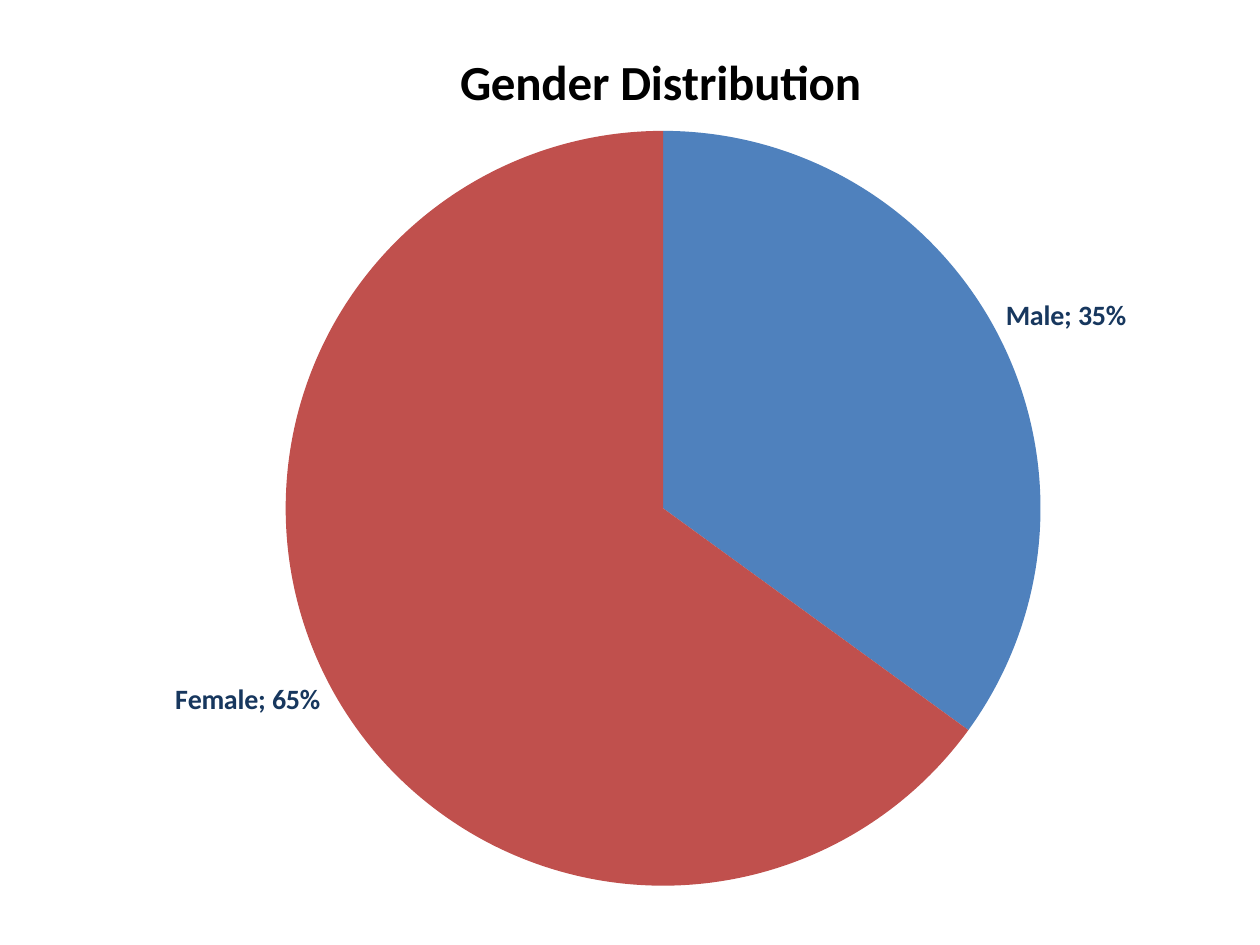
from pptx import Presentation
from pptx.chart.data import CategoryChartData
from pptx.dml.color import RGBColor
from pptx.enum.chart import XL_CHART_TYPE, XL_LABEL_POSITION
from pptx.oxml import parse_xml
from pptx.oxml.ns import nsdecls, qn
from pptx.util import Emu, Pt

PIE = XL_CHART_TYPE.PIE
OUTSIDE_END = XL_LABEL_POSITION.OUTSIDE_END

PX = 914400 // 126
SLIDE_WIDTH, SLIDE_HEIGHT = 1260, 945

BLACK = RGBColor(0x00, 0x00, 0x00)
NAVY = RGBColor(0x17, 0x37, 0x5E)
BLUE = RGBColor(0x4F, 0x81, 0xBD)
RED = RGBColor(0xC0, 0x50, 0x4D)


def set_layout(element, index, **fractions):
    """Place a chart part by fractions of the chart's size."""
    for old_layout in element.findall(qn("c:layout")):
        element.remove(old_layout)
    target = '<c:layoutTarget val="inner"/>' if "w" in fractions else ""
    modes = "".join(f'<c:{name}Mode val="edge"/>' for name in "xy")
    values = "".join(f'<c:{name} val="{value}"/>' for name, value in fractions.items())
    element.insert(index, parse_xml(
        f'<c:layout {nsdecls("c")}><c:manualLayout>{target}{modes}{values}'
        "</c:manualLayout></c:layout>"))


class SlideBuilder:
    """Holds the style and the current slide."""

    font_name = "Calibri"

    def __init__(self, presentation):
        self.slide = presentation.slides.add_slide(presentation.slide_layouts[6])

    def style_font(self, font, size, color, bold=False):
        font.name = self.font_name
        font.size = Pt(size)
        font.bold = bold
        font.color.rgb = color

    def add_pie(self, box, title, shares, colors):
        data = CategoryChartData(number_format="0%")
        data.categories = list(shares)
        data.add_series("Series 1", list(shares.values()))
        frame = self.slide.shapes.add_chart(PIE, *(Emu(side * PX) for side in box), data)
        chart = frame.chart
        chart.has_legend = False
        self.style_font(chart.font, 10, BLACK)
        self.add_title(chart, title)
        plot = chart.plots[0]
        plot.vary_by_categories = True
        for index, color in enumerate(colors):
            fill = plot.series[0].points[index].format.fill
            fill.solid()
            fill.fore_color.rgb = color
        self.add_labels(plot.series[0].data_labels)
        plot_area = chart.element.chart.plotArea
        set_layout(plot_area, 0, x=0.2, y=0.145, w=0.62, h=0.836)

    def add_title(self, chart, text):
        chart.has_title = True
        title = chart.chart_title
        title.include_in_layout = False
        run = title.text_frame.paragraphs[0].add_run()
        run.text = text
        self.style_font(run.font, 28, BLACK, bold=True)
        set_layout(title.element if hasattr(title, "element") else title._element,
                   1, x=0.336, y=0.044)

    def add_labels(self, labels):
        labels.show_category_name = True
        labels.show_value = True
        labels.show_percentage = False
        labels.number_format = "0%"
        labels.number_format_is_linked = False
        labels.position = OUTSIDE_END
        self.style_font(labels.font, 16, NAVY, bold=True)
        show_bubble_size = labels._element.find(qn("c:showBubbleSize"))
        show_bubble_size.addnext(
            parse_xml(f'<c:separator {nsdecls("c")}>; </c:separator>'))


def main():
    presentation = Presentation()
    presentation.slide_width = Emu(SLIDE_WIDTH * PX)
    presentation.slide_height = Emu(SLIDE_HEIGHT * PX)
    builder = SlideBuilder(presentation)
    builder.add_pie((42, 0, 1218, 903), "Gender Distribution",
                    {"Male": 0.35, "Female": 0.65}, (BLUE, RED))
    presentation.save("out.pptx")


if __name__ == "__main__":
    main()
